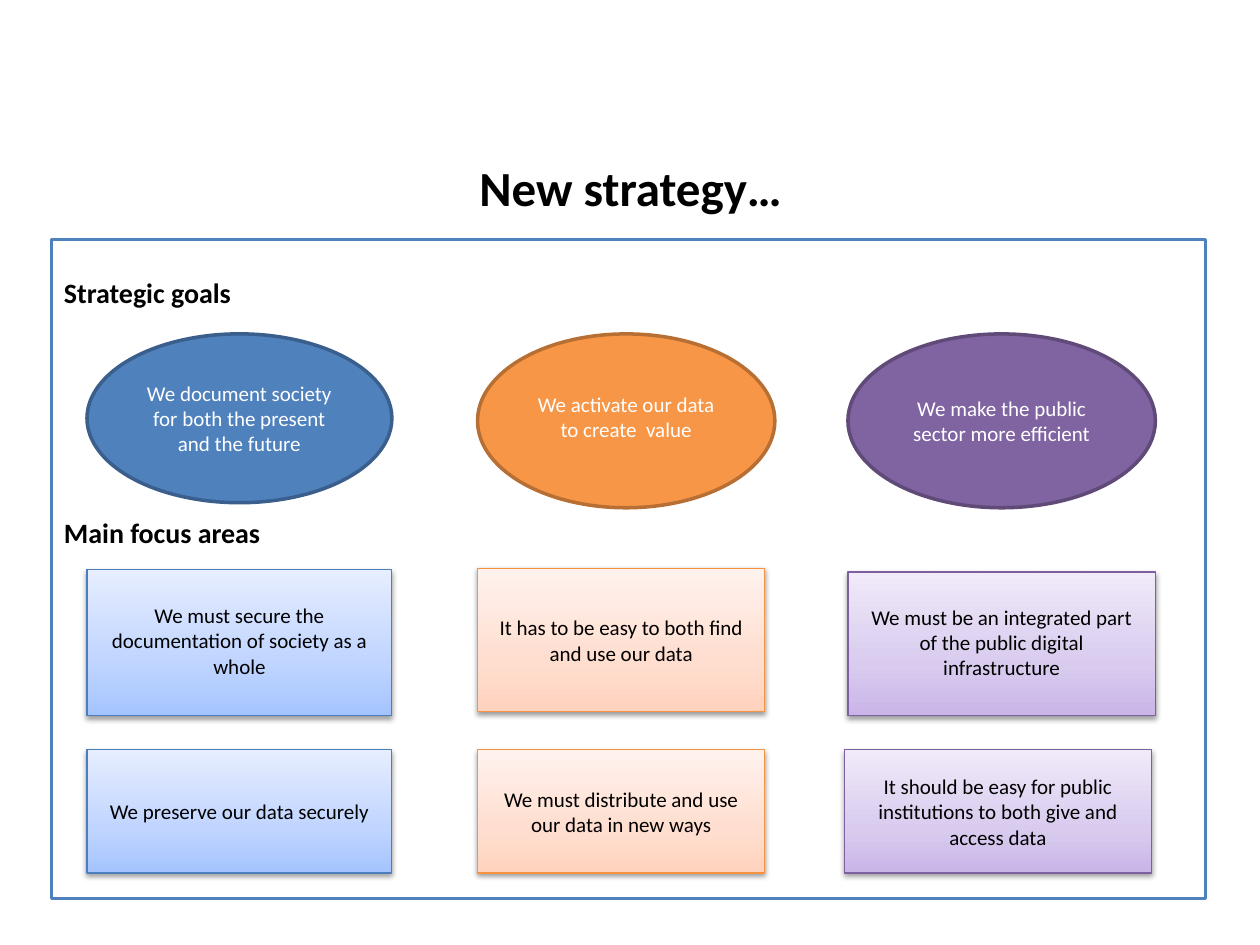
"""Build the strategy slide with its goals and focus areas."""
import copy

import pptx
import pptx.dml.color
import pptx.enum.shapes
import pptx.enum.text
import pptx.oxml
import pptx.oxml.ns
import pptx.util

Inches = pptx.util.Inches
Pt = pptx.util.Pt
SHAPE = pptx.enum.shapes.MSO_SHAPE
ALIGN = pptx.enum.text.PP_ALIGN
ANCHOR = pptx.enum.text.MSO_ANCHOR

COLORS = {
    "white": "FFFFFF", "black": "000000",
    "blue": "4F81BD", "blue rim": "3A5F8C", "blue edge": "4B7EBC",
    "blue low": "A4C4FF", "blue mid": "BFD4FF", "blue top": "E6EEFF",
    "orange": "F79646", "orange rim": "B76F34", "orange edge": "F69240",
    "orange low": "FFD2BD", "orange mid": "FFDED0", "orange top": "FFF2ED",
    "purple": "8064A2", "purple rim": "5F4A78", "purple edge": "7D60A0",
    "purple low": "C9B5E8", "purple mid": "D8CBEE", "purple top": "F0EAF9",
}

GOALS = [
    ("blue", 0.69, 2.42, 1.34, 0,
     "We document society for both the present and the future"),
    ("orange", 3.79, 2.36, 1.38, 0.06, "We activate our data to create  value"),
    ("purple", 6.73, 2.44, 1.38, 0, "We make the public sector more efficient"),
]
AREAS = [
    ("blue", 0.69, 4.52, 2.42, 1.16, 0.03,
     "We must secure the documentation of society as a whole"),
    ("blue", 0.69, 5.95, 2.42, 0.98, 0, "We preserve our data securely"),
    ("orange", 3.79, 4.51, 2.28, 1.14, 0,
     "It has to be easy to both find and use our data"),
    ("orange", 3.79, 5.95, 2.28, 0.98, 0,
     "We must distribute and use our data in new ways"),
    ("purple", 6.73, 4.54, 2.44, 1.14, 0.03,
     "We must be an integrated part of the public digital infrastructure"),
    ("purple", 6.7, 5.95, 2.44, 0.98, 0,
     "It should be easy for public institutions to both give and access data"),
]


class Deck:
    font = "Calibri"

    def __init__(self):
        self.show = pptx.Presentation()
        self.show.slide_width, self.show.slide_height = Inches(10), Inches(7.5)
        self.slide = self.show.slides.add_slide(self.show.slide_layouts[5])

    def color(self, name):
        return pptx.dml.color.RGBColor.from_string(COLORS[name])

    def letter(self, frame, text, size, color, bold=False, align=ALIGN.CENTER):
        frame.text = text
        frame.word_wrap = True
        for line in frame.paragraphs:
            line.alignment = align
            for run in line.runs:
                run.font.name, run.font.size = self.font, Pt(size)
                run.font.bold = bold
                run.font.color.rgb = self.color(color)

    def title(self, text, left, top, width, height):
        box = self.slide.shapes.title
        box.left, box.top = Inches(left), Inches(top)
        box.width, box.height = Inches(width), Inches(height)
        box.text_frame.vertical_anchor = ANCHOR.TOP
        self.letter(box.text_frame, text, 28, "black", True)

    def shape(self, kind, left, top, width, height, edge, weight):
        item = self.slide.shapes.add_shape(
            kind, Inches(left), Inches(top), Inches(width), Inches(height))
        item.shadow.inherit = False
        item.line.color.rgb = self.color(edge)
        item.line.width = Pt(weight)
        return item

    def solid(self, item, name):
        item.fill.solid()
        item.fill.fore_color.rgb = self.color(name)

    def panel(self, heads, left, top, width, height):
        item = self.shape(SHAPE.RECTANGLE, left, top, width, height, "blue", 2)
        self.solid(item, "white")
        frame = item.text_frame
        frame.vertical_anchor = ANCHOR.TOP
        frame.margin_top = Inches(0.29)
        self.letter(frame, "\n".join(heads), 16, "black", True, ALIGN.LEFT)
        for line in frame.paragraphs[1:]:
            line.space_before = Pt(118)

    def label(self, item, text, color, lift):
        frame = item.text_frame
        frame.vertical_anchor = ANCHOR.MIDDLE
        frame.margin_bottom = Inches(0.05 + lift)
        self.letter(frame, text, 12, color)

    def goal(self, hue, left, width, height, lift, text):
        item = self.shape(SHAPE.OVAL, left, 2.65, width, height, hue + " rim", 2)
        self.solid(item, hue)
        self.label(item, text, "white", lift)

    def area(self, hue, left, top, width, height, lift, text):
        item = self.shape(
            SHAPE.RECTANGLE, left, top, width, height, hue + " edge", 0.75)
        self.blend(item, hue)
        self.shade(item)
        self.label(item, text, "black", lift)

    def blend(self, item, hue):
        item.fill.gradient()
        item.fill.gradient_angle = 90
        first = item.element.spPr.find(".//" + pptx.oxml.ns.qn("a:gs"))
        first.addnext(copy.deepcopy(first))
        parts = zip(item.fill.gradient_stops, (0, 0.35, 1), ("low", "mid", "top"))
        for stop, place, tone in parts:
            stop.position = place
            stop.color.rgb = self.color(f"{hue} {tone}")

    def shade(self, item):
        effect = item.element.spPr.find(pptx.oxml.ns.qn("a:effectLst"))
        effect.append(pptx.oxml.parse_xml(
            f'<a:outerShdw {pptx.oxml.ns.nsdecls("a")} blurRad="{Pt(3.1)}" '
            f'dist="{Pt(1.6)}" dir="5400000" rotWithShape="0">'
            f'<a:srgbClr val="{COLORS["black"]}"><a:alpha val="38000"/>'
            '</a:srgbClr></a:outerShdw>'))


def main():
    deck = Deck()
    deck.title("New strategy…", 1.46, 1.2, 7.09, 0.57)
    deck.panel(["Strategic goals", "Main focus areas"], 0.41, 1.9, 9.16, 5.23)
    for goal in GOALS:
        deck.goal(*goal)
    for area in AREAS:
        deck.area(*area)
    deck.show.save("out.pptx")


if __name__ == "__main__":
    main()
